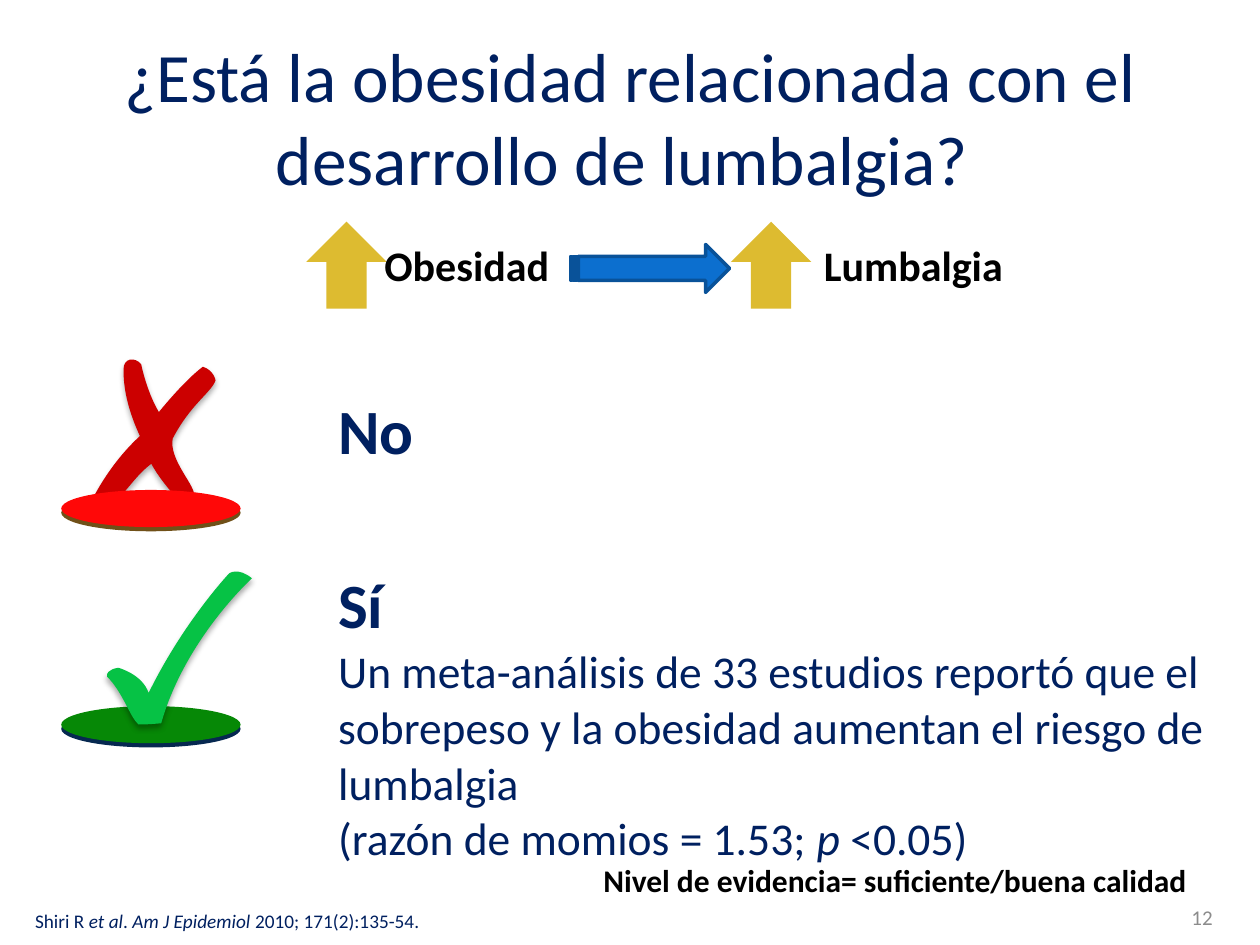
from lxml.etree import SubElement
from pptx import Presentation
from pptx.dml.color import RGBColor
from pptx.enum.shapes import MSO_SHAPE
from pptx.enum.text import MSO_ANCHOR, PP_ALIGN
from pptx.oxml.ns import qn
from pptx.util import Pt

NAVY = RGBColor(0x00, 0x20, 0x60)
BLACK = RGBColor(0x00, 0x00, 0x00)
GRAY = RGBColor(0x8C, 0x8C, 0x8C)
GOLD = RGBColor(0xDD, 0xBB, 0x30)
BLUE = RGBColor(0x0C, 0x6F, 0xCF)
DARK_BLUE = RGBColor(0x09, 0x52, 0x99)
CROSS_RED = RGBColor(0xCC, 0x00, 0x00)
DISC_RED = RGBColor(0xFF, 0x08, 0x08)
RED_RIM = RGBColor(0x70, 0x50, 0x18)
CHECK_GREEN = RGBColor(0x06, 0xC2, 0x45)
DISC_GREEN = RGBColor(0x06, 0x88, 0x06)
GREEN_RIM = RGBColor(0x06, 0x28, 0x50)
NO_TABLE_STYLE = "{2D5ABB26-0587-4C30-8999-92F81FD0307C}"

# Outlines: size, start point, then Bezier triples, in units of 0.72 pt
OUTLINE_UNIT = 0.72
CROSS = ((98, 122), (2, 110), [
    ((2, 110), (15, 84), (38, 63)), ((26, 37), (25, 20), (25, 10)),
    ((25, 1), (34, 0), (39, 6)), ((39, 6), (43, 27), (53, 44)),
    ((76, 16), (88, 8), (88, 8)), ((97, 11), (98, 19), (98, 19)),
    ((94, 29), (78, 38), (64, 65)), ((61, 81), (80, 100), (81, 109)),
    ((77, 114), (79, 114), (73, 118)), ((73, 118), (57, 103), (47, 85)),
    ((34, 95), (31, 103), (12, 122)), ((12, 122), (0, 121), (2, 110))])
CHECK = ((116, 125), (1, 87), [
    ((14, 100), (19, 119), (26, 125)), ((35, 125), (44, 124), (44, 124)),
    ((63, 57), (116, 9), (116, 9)), ((105, 0), (98, 5), (98, 5)),
    ((98, 5), (62, 43), (34, 100)), ((29, 85), (10, 80), (10, 80)),
    ((10, 80), (0, 81), (1, 87))])


def write(paragraph, runs, **formats):
    """Add (text, own formats) runs that share the given formats."""
    for text, own in runs:
        run = paragraph.add_run()
        run.text = text
        values = {"name": "Calibri", **formats, **own}
        run.font.color.rgb = values.pop("color")
        for name, value in values.items():
            setattr(run.font, name, value)


def add_text(slide, box, runs, frame_format=None, align=PP_ALIGN.LEFT, **formats):
    frame = slide.shapes.add_textbox(*map(Pt, box)).text_frame
    for name, value in {"word_wrap": True, **(frame_format or {})}.items():
        setattr(frame, name, value)
    paragraph = frame.paragraphs[0]
    paragraph.alignment = align
    write(paragraph, runs, **formats)


def paint(shape, fill, line=None):
    shape.shadow.inherit = False
    shape.fill.solid()
    shape.fill.fore_color.rgb = fill
    if line:
        shape.line.color.rgb = line
        shape.line.width = Pt(2)
    else:
        shape.line.fill.background()


def add_preset(slide, kind, box, fill, line=None):
    shape = slide.shapes.add_shape(kind, *map(Pt, box))
    paint(shape, fill, line)
    return shape


def drop_shadow(shape, color, blur, distance, opacity):
    """Cast a shadow straight down."""
    effects = shape.element.spPr.find(qn("a:effectLst"))
    shadow = SubElement(effects, qn("a:outerShdw"), blurRad=str(Pt(blur)),
                        dist=str(Pt(distance)), dir="5400000", rotWithShape="0")
    tint = SubElement(shadow, qn("a:srgbClr"), val=str(color))
    SubElement(tint, qn("a:alpha"), val=str(opacity * 1000))


def add_mark(slide, left, top, outline, fill):
    (width, height), start, curves = outline
    builder = slide.shapes.build_freeform(0, 0, scale=Pt(OUTLINE_UNIT))
    builder.add_line_segments([(width, 0), (width, height), (0, height)], close=True)
    shape = builder.convert_to_shape(Pt(left), Pt(top))
    # Curved outline inside the box
    contour = next(shape.element.iter(qn("a:path")))
    for segment in list(contour):
        contour.remove(segment)
    contour.set("w", str(width))
    contour.set("h", str(height))
    for tag, points in [("a:moveTo", [start])] + [("a:cubicBezTo", curve) for curve in curves]:
        segment = SubElement(contour, qn(tag))
        for x, y in points:
            SubElement(segment, qn("a:pt"), x=str(x), y=str(y))
    SubElement(contour, qn("a:close"))
    paint(shape, fill)
    drop_shadow(shape, BLACK, 3.5, 2.2, 32)


def add_disc(slide, box, fill, rim):
    drop_shadow(add_preset(slide, MSO_SHAPE.OVAL, box, fill), rim, 0, 2.4, 100)


def add_title(slide, box):
    title = slide.shapes.title
    title.left, title.top, title.width, title.height = map(Pt, box)
    title.text_frame.vertical_anchor = MSO_ANCHOR.MIDDLE
    paragraph = title.text_frame.paragraphs[0]
    paragraph.alignment = PP_ALIGN.CENTER
    write(paragraph, [("¿Está la obesidad relacionada con el desarrollo de lumbalgia? ", {})],
          size=Pt(39.6), color=NAVY)


def add_relation(slide, box):
    """Rising obesity leads to rising low back pain."""
    left, top, width, height = box
    for offset, text_offset, label in ((0, 37.5, "Obesidad"), (242.6, 288.7, "Lumbalgia")):
        add_preset(slide, MSO_SHAPE.UP_ARROW, (left + offset, top, 46, height), GOLD)
        add_text(slide, (left + text_offset, top + 6.5, 118, 36), [(label, {})],
                 size=Pt(24), bold=True, color=BLACK)
    add_preset(slide, MSO_SHAPE.STRIPED_RIGHT_ARROW,
               (left + 151.2, top + 13, 90.7, 27.4), BLUE, DARK_BLUE)


def add_answers(slide, box):
    table = slide.shapes.add_table(2, 1, *map(Pt, box)).table
    table.first_row = table.horz_banding = False
    next(slide.shapes[-1].element.iter(qn("a:tableStyleId"))).text = NO_TABLE_STYLE
    no_cell, yes_cell = table.cell(0, 0), table.cell(1, 0)
    for cell in (no_cell, yes_cell):
        cell.fill.background()
    no_cell.vertical_anchor = MSO_ANCHOR.MIDDLE
    heading = {"size": Pt(36), "bold": True, "color": NAVY}
    body = {"size": Pt(26), "bold": False, "color": NAVY}
    write(no_cell.text_frame.paragraphs[0], [("No", {})], **heading)
    write(yes_cell.text_frame.paragraphs[0], [("Sí", {})], **heading)
    paragraph = yes_cell.text_frame.add_paragraph()
    write(paragraph, [("Un meta-análisis de 33 estudios reportó que el sobrepeso y la "
                       "obesidad aumentan el riesgo de lumbalgia", {})], **body)
    paragraph.add_line_break()
    write(paragraph, [("(razón de momios = 1.53; ", {}), ("p", {"italic": True}),
                      (" <0.05)", {})], **body)


def add_footer(slide, box):
    left, top, width, height = box
    add_text(slide, (left, top + 31, width, 13.7),
             [("Shiri R ", {}), ("et al", {"italic": True}), (". ", {}),
              ("Am J Epidemiol", {"italic": True}), (" 2010; 171(2):135-54.", {})],
             {"vertical_anchor": MSO_ANCHOR.BOTTOM, "margin_left": 0, "margin_top": 0,
              "margin_right": 0, "margin_bottom": 0}, size=Pt(11), color=NAVY)
    add_text(slide, (left + 317.7, top, 350.6, 28.8),
             [("Nivel de evidencia= suficiente/buena calidad", {})],
             {"word_wrap": False}, size=Pt(18), bold=True, color=BLACK)
    add_text(slide, (left + width - 168, top + 21.6, 168, 28.8), [("12", {})],
             {"vertical_anchor": MSO_ANCHOR.MIDDLE}, PP_ALIGN.RIGHT, size=Pt(12), color=GRAY)


def main():
    presentation = Presentation()
    presentation.slide_width, presentation.slide_height = Pt(720), Pt(540)
    slide = presentation.slides.add_slide(presentation.slide_layouts[5])
    add_title(slide, (36, 21.6, 648, 90))
    add_relation(slide, (175, 126.7, 412, 49.7))
    # Cross stands behind its disc, check mark in front
    add_mark(slide, 52.6, 203.8, CROSS, CROSS_RED)
    add_disc(slide, (35, 280, 102.5, 21.2), DISC_RED, RED_RIM)
    add_answers(slide, (186, 174.2, 514, 293.8))
    add_disc(slide, (35, 403.5, 102.5, 21.2), DISC_GREEN, GREEN_RIM)
    add_mark(slide, 60.5, 324, CHECK, CHECK_GREEN)
    add_footer(slide, (20, 488.2, 680, 51.8))
    presentation.save("out.pptx")


if __name__ == "__main__":
    main()
